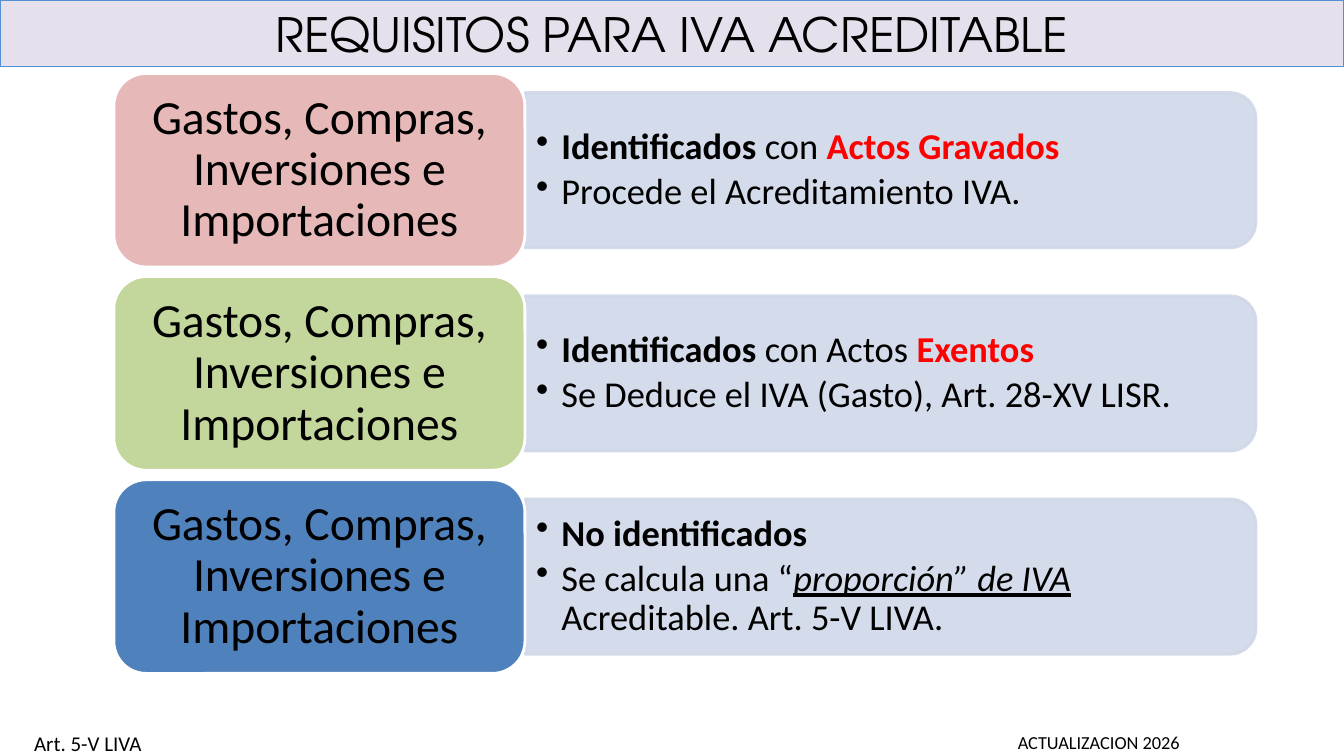
from lxml import etree
from pptx import Presentation
from pptx.dml.color import RGBColor
from pptx.enum.shapes import MSO_SHAPE
from pptx.enum.text import MSO_ANCHOR, MSO_AUTO_SIZE, PP_ALIGN
from pptx.oxml.ns import qn
from pptx.util import Cm, Pt

CENTER = PP_ALIGN.CENTER
LEFT = PP_ALIGN.LEFT
MIDDLE = MSO_ANCHOR.MIDDLE
NO_AUTOFIT = MSO_AUTO_SIZE.NONE
ROUNDED = MSO_SHAPE.ROUNDED_RECTANGLE
ROUNDED_SIDE = MSO_SHAPE.ROUND_2_SAME_RECTANGLE

COLORS = {
    "black": "000000", "white": "FFFFFF", "red": "FF0000",
    "title_fill": "E6E0EC", "title_line": "558ED5", "panel": "D0D8E8",
    "pink": "E6B9B8", "green": "C3D69B", "blue": "4F81BD",
}

SLIDE_WIDTH, SLIDE_HEIGHT = 33.87, 19.05
ROW_LEFT, ROW_TOP, ROW_WIDTH, ROW_HEIGHT, ROW_PITCH = 2.87, 1.85, 28.78, 4.88, 5.12
CARD_WIDTH, PANEL_HEIGHT = 10.36, 3.91
CARD_TEXT = "Gastos, Compras, Inversiones e Importaciones"
BOLD = {"bold": True}
RED = {"bold": True, "color": "red"}
EMPHASIS = {"italic": True, "underline": True}

ROWS = [
    ("pink", [
        [("Identificados ", BOLD), ("con ", {}), ("Actos Gravados", RED)],
        [("Procede el Acreditamiento IVA.", {})],
    ]),
    ("green", [
        [("Identificados", BOLD), (" con Actos ", {}), ("Exentos", RED)],
        [("Se Deduce el IVA (Gasto), Art. 28-XV LISR.", {})],
    ]),
    ("blue", [
        [("No identificados", BOLD)],
        [("Se calcula una “", {}), ("proporción” de IVA ", EMPHASIS),
         ("Acreditable. Art. 5-V LIVA.", {})],
    ]),
]


def rgb(name):
    """Return the named colour."""
    return RGBColor.from_string(COLORS[name])


def write_text(paragraph, text, size, font="Calibri", color="black",
               bold=False, italic=False, underline=False, align=LEFT):
    """Add one formatted run to a paragraph."""
    paragraph.alignment = align
    run = paragraph.add_run()
    run.text = text
    run.font.name = font
    run.font.size = Pt(size)
    run.font.bold = bold
    run.font.italic = italic
    run.font.underline = underline
    run.font.color.rgb = rgb(color)


def set_margins(text_frame, side, edge):
    """Set the horizontal and vertical insets of a text frame."""
    text_frame.margin_left = text_frame.margin_right = Cm(side)
    text_frame.margin_top = text_frame.margin_bottom = Cm(edge)


def paint(shape, fill, line, width):
    """Give a shape its fill and outline."""
    shape.fill.solid()
    shape.fill.fore_color.rgb = rgb(fill)
    shape.line.color.rgb = rgb(line)
    shape.line.width = Pt(width)


def add_bullet(paragraph):
    """Give a paragraph a hanging bullet."""
    properties = paragraph._p.get_or_add_pPr()
    properties.set("marL", str(Cm(0.64)))
    properties.set("indent", str(-Cm(0.64)))
    etree.SubElement(properties, qn("a:buChar")).set("char", "•")


def add_title(slide, left, top, width, height):
    """Format the title placeholder as a band."""
    title = slide.shapes.title
    title.left, title.top, title.width, title.height = map(Cm, (left, top, width, height))
    paint(title, "title_fill", "title_line", 0.75)
    text_frame = title.text_frame
    text_frame.auto_size = NO_AUTOFIT
    text_frame.vertical_anchor = MIDDLE
    set_margins(text_frame, 0.23, 0.13)
    write_text(text_frame.paragraphs[0], "REQUISITOS PARA IVA ACREDITABLE", 33.8,
               font="TeX Gyre Adventor", align=CENTER)


def add_panel(slide, left, top, width, height, bullets):
    """Draw a panel rounded on its right side, with its bulleted text."""
    turn = (width - height) / 2
    panel = slide.shapes.add_shape(ROUNDED_SIDE, Cm(left + turn), Cm(top - turn),
                                   Cm(height), Cm(width))
    panel.rotation = 90
    panel.shadow.inherit = False
    paint(panel, "panel", "panel", 2)
    for color in panel._element.spPr.iter(qn("a:srgbClr")):
        etree.SubElement(color, qn("a:alpha")).set("val", "90000")

    box = slide.shapes.add_textbox(Cm(left), Cm(top + 0.19), Cm(width - 0.21), Cm(height - 0.38))
    text_frame = box.text_frame
    text_frame.word_wrap = True
    text_frame.vertical_anchor = MIDDLE
    set_margins(text_frame, 0.28, 0.13)
    for index, runs in enumerate(bullets):
        paragraph = text_frame.add_paragraph() if index else text_frame.paragraphs[0]
        add_bullet(paragraph)
        paragraph.line_spacing = 0.9
        paragraph.space_after = Pt(4)
        for text, style in runs:
            write_text(paragraph, text, 26, **style)


def add_card(slide, left, top, width, height, fill):
    """Draw a rounded card with its heading."""
    card = slide.shapes.add_shape(ROUNDED, Cm(left), Cm(top), Cm(width), Cm(height))
    card.shadow.inherit = False
    paint(card, fill, "white", 2)
    text_frame = card.text_frame
    text_frame.word_wrap = True
    text_frame.vertical_anchor = MIDDLE
    set_margins(text_frame, 0.36, 0.18)
    paragraph = text_frame.paragraphs[0]
    paragraph.line_spacing = 0.9
    write_text(paragraph, CARD_TEXT, 34, align=CENTER)


def add_row(slide, left, top, width, height, fill, bullets):
    """Place a card and the panel beside it."""
    add_panel(slide, left + CARD_WIDTH, top + (height - PANEL_HEIGHT) / 2,
              width - CARD_WIDTH, PANEL_HEIGHT, bullets)
    add_card(slide, left, top, CARD_WIDTH, height, fill)


def add_note(slide, left, top, width, height, text, size, wrap):
    """Add a small note at the foot of the slide."""
    box = slide.shapes.add_textbox(Cm(left), Cm(top), Cm(width), Cm(height))
    box.text_frame.word_wrap = wrap
    write_text(box.text_frame.paragraphs[0], text, size)


def main():
    """Build and save the slide."""
    presentation = Presentation()
    presentation.slide_width = Cm(SLIDE_WIDTH)
    presentation.slide_height = Cm(SLIDE_HEIGHT)
    slide = presentation.slides.add_slide(presentation.slide_layouts[5])
    add_title(slide, 0, 0, SLIDE_WIDTH, 1.68)
    for index, (fill, bullets) in enumerate(ROWS):
        add_row(slide, ROW_LEFT, ROW_TOP + index * ROW_PITCH, ROW_WIDTH, ROW_HEIGHT,
                fill, bullets)
    add_note(slide, 0.61, 18.29, 4.7, 0.89, "Art. 5-V LIVA", 15, True)
    add_note(slide, 25.4, 18.29, 4.62, 0.81, "ACTUALIZACION 2026", 13.1, False)
    presentation.save("out.pptx")


if __name__ == "__main__":
    main()
